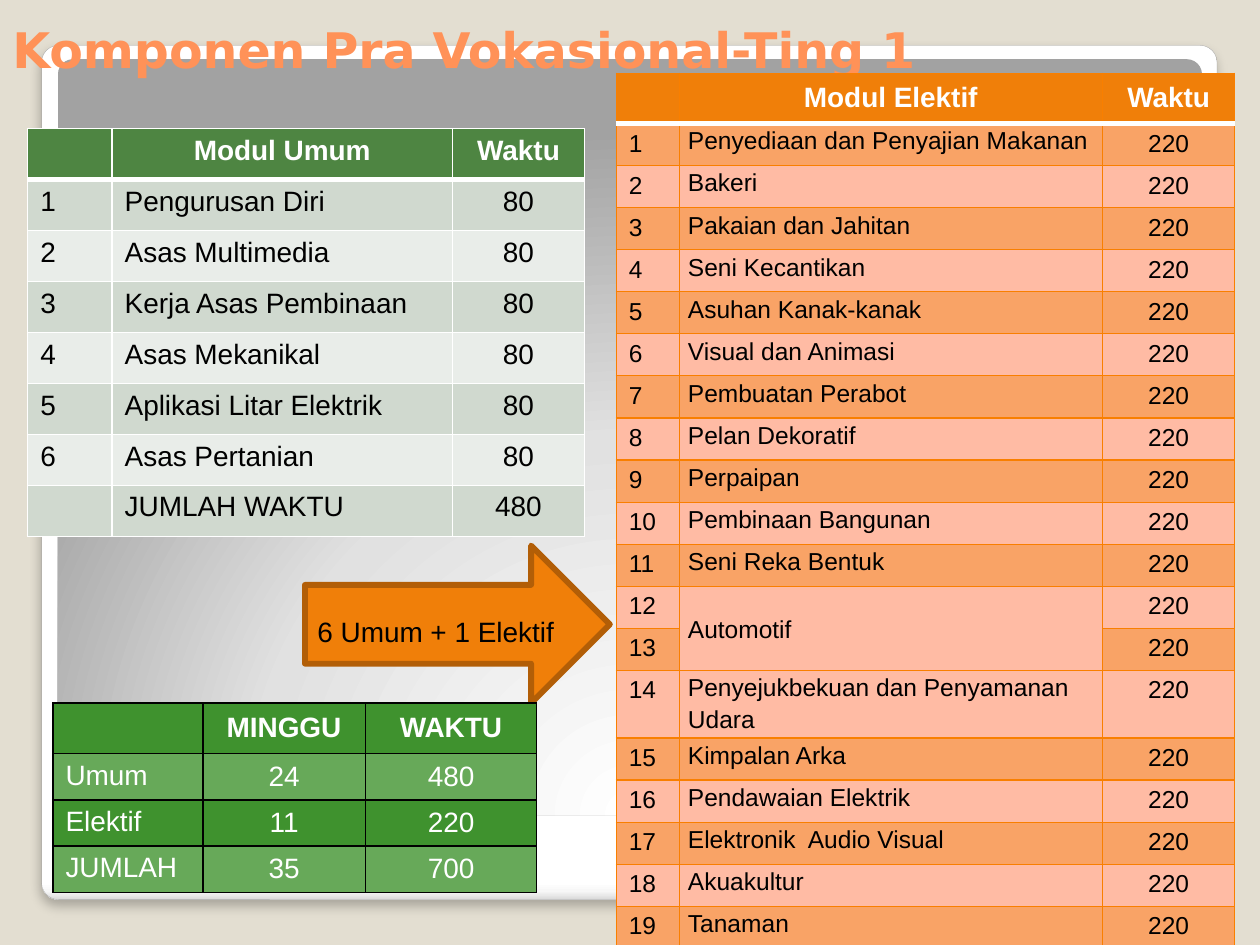
"""Build the slide on the Ting 1 pre-vocational components."""
from lxml.etree import SubElement
from pptx import Presentation
from pptx.dml.color import RGBColor
from pptx.enum.shapes import MSO_SHAPE
from pptx.enum.text import MSO_ANCHOR, PP_ALIGN
from pptx.oxml import parse_xml
from pptx.oxml.ns import nsdecls, qn
from pptx.util import Inches, Pt

BEIGE = RGBColor(0xE3, 0xDE, 0xD1)
CORAL = RGBColor(0xFF, 0x92, 0x58)
WHITE = RGBColor(0xFF, 0xFF, 0xFF)
BLACK = RGBColor(0, 0, 0)
GREY = RGBColor(0xA4, 0xA4, 0xA4)
ORANGE = RGBColor(0xF0, 0x7F, 0x09)
ORANGE_EDGE = RGBColor(0xF9, 0x7F, 0x00)
ORANGE_BAND = RGBColor(0xF9, 0xA3, 0x66)
PEACH = RGBColor(0xFF, 0xBB, 0xA4)
BROWN = RGBColor(0xB2, 0x5E, 0x07)
MOSS = RGBColor(0x4E, 0x85, 0x42)
SAGE = RGBColor(0xD0, 0xD9, 0xCF)
MIST = RGBColor(0xE9, 0xED, 0xE9)
GREEN = RGBColor(0x3F, 0x92, 0x2E)
LIGHT_GREEN = RGBColor(0x67, 0xA9, 0x59)

TITLE = "Komponen Pra Vokasional-Ting 1"
ARROW_TEXT = "6 Umum + 1 Elektif"
ELECTIVES = [
    "Penyediaan dan Penyajian Makanan", "Bakeri", "Pakaian dan Jahitan",
    "Seni Kecantikan", "Asuhan Kanak-kanak", "Visual dan Animasi",
    "Pembuatan Perabot", "Pelan Dekoratif", "Perpaipan", "Pembinaan Bangunan",
    "Seni Reka Bentuk", "Automotif", "", "Penyejukbekuan dan Penyamanan Udara",
    "Kimpalan Arka", "Pendawaian Elektrik", "Elektronik  Audio Visual",
    "Akuakultur", "Tanaman",
]
GENERAL = [
    "Pengurusan Diri", "Asas Multimedia", "Kerja Asas Pembinaan",
    "Asas Mekanikal", "Aplikasi Litar Elektrik", "Asas Pertanian",
]
elective_rows = [("", "Modul Elektif", "Waktu")]
elective_rows += [(str(n), name, "220") for n, name in enumerate(ELECTIVES, 1)]
general_rows = [("", "Modul Umum", "Waktu")]
general_rows += [(str(n), name, "80") for n, name in enumerate(GENERAL, 1)]
general_rows += [("", "JUMLAH WAKTU", "480")]
summary_rows = [
    ("", "MINGGU", "WAKTU"),
    ("Umum", "24", "480"),
    ("Elektif", "11", "220"),
    ("JUMLAH", "35", "700"),
]
FIRST_ELECTIVE, AUTOMOTIVE, COOLING = 1, 12, 14
elective_heights = [(6.79 - 0.39 - 0.32 - 0.5) / 17] * len(elective_rows)
elective_heights[0] = 0.39
elective_heights[FIRST_ELECTIVE] = 0.32
elective_heights[COOLING] = 0.5


def add_span(para, text, size, color, bold=False, font="Arial"):
    span = para.add_run()
    span.text = text
    span.font.name, span.font.size, span.font.bold = font, Pt(size), bold
    span.font.color.rgb = color


def add_text(page, place, text, anchor, **style):
    box = page.shapes.add_textbox(*map(Inches, place))
    box.text_frame.word_wrap = True
    box.text_frame.vertical_anchor = anchor
    add_span(box.text_frame.paragraphs[0], text, **style)


def set_borders(cell, borders):
    properties = cell._tc.get_or_add_tcPr()
    for side in "LRTB":
        color, width = borders[side]
        line = SubElement(properties, qn(f"a:ln{side}"), w=str(Pt(width)))
        fill = SubElement(line, qn("a:solidFill"))
        SubElement(fill, qn("a:srgbClr"), val=str(color))


def add_grid(page, place, widths, heights, rows, fills, text_color, edge,
             rule=None, body_size=16, centred=(2,)):
    left, top = map(Inches, place)
    frame = page.shapes.add_table(len(rows), len(widths), left, top,
                                  Inches(sum(widths)), Inches(sum(heights)))
    table = frame.table
    for column, width in zip(table.columns, widths):
        column.width = Inches(width)
    for r, values in enumerate(rows):
        table.rows[r].height = Inches(heights[r])
        header = r == 0
        borders = dict.fromkeys("LRTB", edge)
        if rule and r < 2:
            borders["B" if header else "T"] = rule
        for c, value in enumerate(values):
            cell = table.cell(r, c)
            set_borders(cell, borders)
            cell.fill.solid()
            cell.fill.fore_color.rgb = fills[0 if header else 2 - r % 2]
            para = cell.text_frame.paragraphs[0]
            if header or c in centred:
                para.alignment = PP_ALIGN.CENTER
            add_span(para, value, 16 if header else body_size,
                     WHITE if header else text_color, header)
    return table


def add_panel(page, place, stops, direction):
    panel = page.shapes.add_shape(MSO_SHAPE.ROUNDED_RECTANGLE,
                                  *map(Inches, place))
    panel.adjustments[0] = 0.02
    panel.shadow.inherit = False
    panel.line.fill.background()
    marks = "".join(f'<a:gs pos="{position * 1000}"><a:srgbClr val="{color}"/></a:gs>'
                    for position, color in stops)
    gradient = parse_xml(f'<a:gradFill {nsdecls("a")} rotWithShape="1">'
                         f"<a:gsLst>{marks}</a:gsLst>{direction}</a:gradFill>")
    panel._element.spPr.find(qn("a:prstGeom")).addnext(gradient)
    return panel


def add_shadow(shape):
    effects = shape._element.spPr.find(qn("a:effectLst"))
    shadow = SubElement(effects, qn("a:outerShdw"), blurRad=str(Pt(6)),
                        dist=str(Pt(4)), dir="5400000", algn="t", rotWithShape="0")
    color = SubElement(shadow, qn("a:srgbClr"), val=str(BLACK))
    SubElement(color, qn("a:alpha"), val="25000")


def main():
    deck = Presentation()
    deck.slide_width, deck.slide_height = Inches(10), Inches(7.5)
    page = deck.slides.add_slide(deck.slide_layouts[6])
    page.background.fill.solid()
    page.background.fill.fore_color.rgb = BEIGE

    card = add_panel(page, (0.33, 0.36, 9.33, 6.78),
                     [(0, "FFFFFF"), (98, "FFFFFF"), (99, "F7F7F7"), (100, "DADADA")],
                     '<a:lin ang="5400000" scaled="0"/>')
    card.line.color.rgb, card.line.width = GREY, Pt(0.16)
    add_shadow(card)
    add_panel(page, (0.46, 0.47, 9.08, 6),
              [(0, "FFFFFF"), (55, "E1E1E1"), (100, "A2A2A2")],
              '<a:path path="circle"><a:fillToRect l="50000" t="175000" '
              'r="50000" b="-75000"/></a:path>')
    add_text(page, (0, 0, 10, 0.67), TITLE, MSO_ANCHOR.BOTTOM,
             size=28, color=CORAL, bold=True, font="DejaVu Sans")

    electives = add_grid(page, (4.89, 0.58), (0.5, 3.36, 1.05), elective_heights,
                         elective_rows, (ORANGE, ORANGE_BAND, PEACH), BLACK,
                         (ORANGE_EDGE, 0.75), (WHITE, 3.35), body_size=14)
    for c in range(3):
        electives.cell(0, c).vertical_anchor = MSO_ANCHOR.MIDDLE
    for r in range(1, len(elective_rows)):
        cell = electives.cell(r, 1)
        cell.margin_left = cell.margin_right = Inches(0.07)
        cell.margin_top = cell.margin_bottom = 0
        cell.text_frame.paragraphs[0].line_spacing = 1.15
    automotive = electives.cell(AUTOMOTIVE, 1)
    automotive.merge(electives.cell(AUTOMOTIVE + 1, 1))
    automotive.vertical_anchor = MSO_ANCHOR.MIDDLE

    add_grid(page, (0.22, 1.02), (0.67, 2.7, 1.05), [3.24 / 8] * 8, general_rows,
             (MOSS, SAGE, MIST), BLACK, (WHITE, 1), (WHITE, 3))

    arrow = page.shapes.add_shape(MSO_SHAPE.RIGHT_ARROW, Inches(2.42), Inches(4.33),
                                  Inches(2.42), Inches(1.25))
    arrow.shadow.inherit = False
    arrow.fill.solid()
    arrow.fill.fore_color.rgb = ORANGE
    arrow.line.color.rgb, arrow.line.width = BROWN, Pt(3.35)
    add_text(page, (2.42, 4.83, 2.12, 0.37), ARROW_TEXT, MSO_ANCHOR.TOP,
             size=16, color=BLACK)

    summary = add_grid(page, (0.42, 5.58), (1.19, 1.29, 1.36), [1.47 / 4] * 4,
                       summary_rows, (GREEN, LIGHT_GREEN, GREEN), WHITE,
                       (BLACK, 1), centred=(1, 2))
    for r in range(len(summary_rows)):
        for c in (1, 2):
            summary.cell(r, c).vertical_anchor = MSO_ANCHOR.MIDDLE
    deck.save("out.pptx")


if __name__ == "__main__":
    main()
